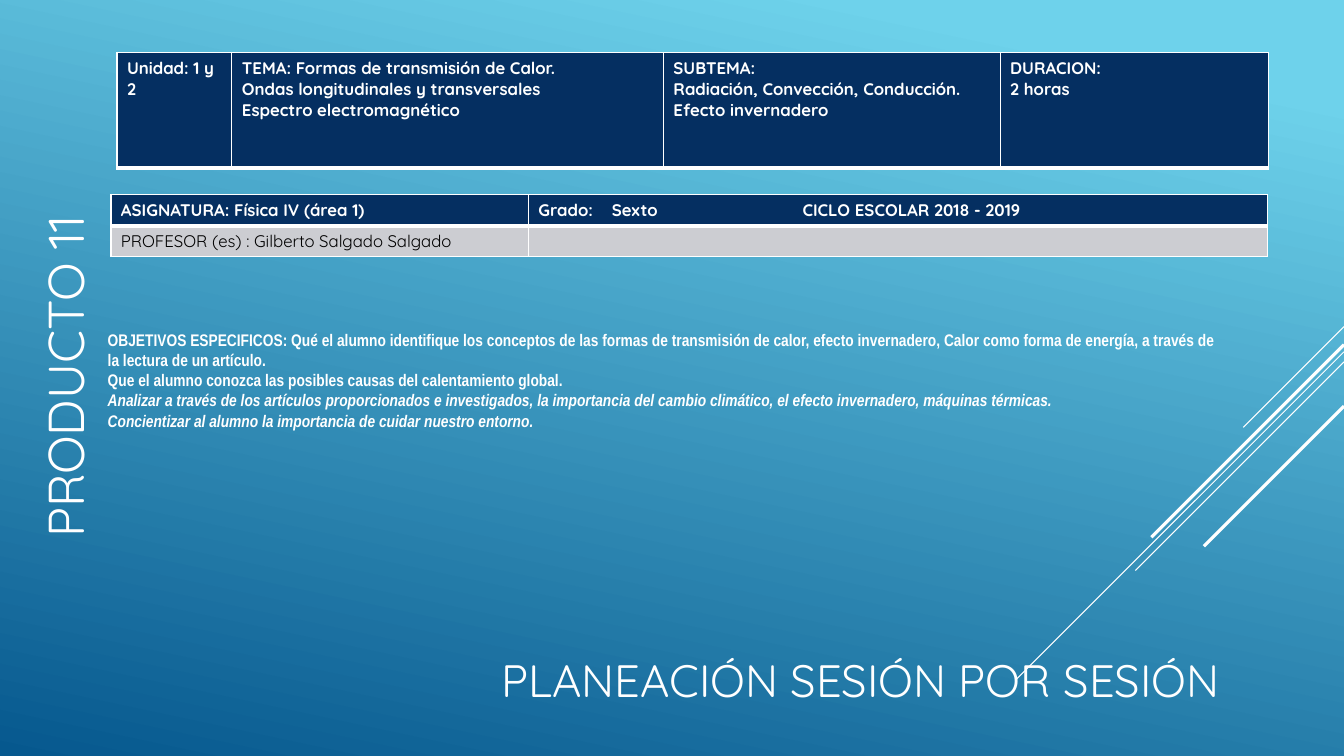
from dataclasses import dataclass

from lxml import etree
from pptx import Presentation
from pptx.dml.color import RGBColor
from pptx.enum.shapes import MSO_CONNECTOR
from pptx.enum.text import MSO_ANCHOR, MSO_AUTO_SIZE, PP_ALIGN
from pptx.oxml.ns import qn
from pptx.util import Inches, Pt

STRAIGHT = MSO_CONNECTOR.STRAIGHT
TOP, MIDDLE = MSO_ANCHOR.TOP, MSO_ANCHOR.MIDDLE
NO_AUTOFIT = MSO_AUTO_SIZE.NONE
LEFT = PP_ALIGN.LEFT
COLORS = {"sky": "6ED2EB", "sea": "06588E", "navy": "052F61",
          "gray": "CCCDD2", "white": "FFFFFF", "black": "000000"}
SLIDE_WIDTH, SLIDE_HEIGHT = 13.33, 7.5


@dataclass
class Ray:
    """A diagonal that descends at 45 degrees from the right edge."""
    top: float
    reach: float
    weight: float


@dataclass
class Entry:
    """The content and look of one table cell."""
    lines: tuple[str, ...]
    fill: str = "navy"
    color: str = "white"
    bold: bool = True
    bottom: float = 3
    tabs: tuple[float, ...] = ()


@dataclass
class Grid:
    """The place, columns and entries of one table."""
    left: float
    top: float
    columns: tuple[float, ...]
    row_height: float
    rows: list[list[Entry]]


RAYS = [Ray(3.24, 1, 0.75), Ray(3.49, 3.26, 0.75), Ray(3.59, 2.07, 0.75),
        Ray(3.42, 1.91, 2.25), Ray(4.03, 1.39, 2.25)]
TOPIC = Grid(1.16, 0.52, (1.14, 4.28, 3.34, 2.66), 1.15, [[
    Entry(("Unidad: 1 y 2",)),
    Entry(("TEMA: Formas de transmisión de Calor.",
           "Ondas longitudinales y transversales",
           "Espectro electromagnético")),
    Entry(("SUBTEMA:", "Radiación, Convección, Conducción.", "Efecto invernadero")),
    Entry(("DURACION:", "2 horas")),
]])
COURSE = Grid(1.1, 1.93, (4.14, 7.33), 0.3, [
    [Entry(("ASIGNATURA: Física IV (área 1)",)),
     Entry(("Grado:\tSexto\tCICLO ESCOLAR 2018 - 2019",), tabs=(0.73, 2.62))],
    [Entry(("PROFESOR (es) : Gilberto Salgado Salgado",), "gray", "black", False, 1),
     Entry((), "gray", bottom=1)],
])
OBJECTIVES = (
    "OBJETIVOS ESPECIFICOS: Qué el alumno identifique los conceptos de las formas de "
    "transmisión de calor, efecto invernadero, Calor como forma de energía, a través de "
    "la lectura de un artículo.",
    "Que el alumno conozca las posibles causas del calentamiento global.",
)
CLIMATE_GOALS = (
    "Analizar a través de los artículos proporcionados e investigados, la importancia del "
    "cambio climático, el efecto invernadero, máquinas térmicas.",
    "Concientizar al alumno la importancia de cuidar nuestro entorno.",
)


def rgb(name: str) -> RGBColor:
    """Return a named colour."""
    return RGBColor.from_string(COLORS[name])


def write(frame, lines, *, size=12.0, font="Quicksand", color="white",
          bold=False, italic=False, append=False) -> None:
    """Write one formatted paragraph per line."""
    for index, line in enumerate(lines):
        new = append or index > 0
        paragraph = frame.add_paragraph() if new else frame.paragraphs[0]
        paragraph.alignment = LEFT
        run = paragraph.add_run()
        run.text = line
        run.font.size, run.font.name = Pt(size), font
        run.font.bold, run.font.italic = bold, italic
        run.font.color.rgb = rgb(color)


def draw_ray(slide, ray: Ray) -> None:
    """Draw one white diagonal."""
    line = slide.shapes.add_connector(
        STRAIGHT, Inches(SLIDE_WIDTH), Inches(ray.top),
        Inches(SLIDE_WIDTH - ray.reach), Inches(ray.top + ray.reach))
    line.line.color.rgb = rgb("white")
    line.line.width = Pt(ray.weight)
    etree.SubElement(line._element.spPr, qn("a:effectLst"))


def add_borders(cell, bottom: float) -> None:
    """Give a cell white borders."""
    properties = cell._tc.get_or_add_tcPr()
    for side, weight in {"L": 1, "R": 1, "T": 1, "B": bottom}.items():
        border = etree.SubElement(properties, qn(f"a:ln{side}"), w=str(Pt(weight)))
        fill = etree.SubElement(border, qn("a:solidFill"))
        etree.SubElement(fill, qn("a:srgbClr"), val=COLORS["white"])


def fill_cell(cell, entry: Entry) -> None:
    """Format a cell and write its entry."""
    add_borders(cell, entry.bottom)
    cell.fill.solid()
    cell.fill.fore_color.rgb = rgb(entry.fill)
    write(cell.text_frame, entry.lines, color=entry.color, bold=entry.bold)
    first = cell.text_frame.paragraphs[0]._p
    if not entry.lines:
        etree.SubElement(first, qn("a:endParaRPr"), sz="1200")
    if entry.tabs:
        stops = etree.SubElement(first.get_or_add_pPr(), qn("a:tabLst"))
        for stop in entry.tabs:
            etree.SubElement(stops, qn("a:tab"), pos=str(Inches(stop)), algn="l")


def draw_grid(slide, grid: Grid) -> None:
    """Draw one table."""
    table = slide.shapes.add_table(
        len(grid.rows), len(grid.columns), Inches(grid.left), Inches(grid.top),
        Inches(sum(grid.columns)), Inches(grid.row_height * len(grid.rows))).table
    for column, width in zip(table.columns, grid.columns):
        column.width = Inches(width)
    for row, entries in zip(table.rows, grid.rows):
        row.height = Inches(grid.row_height)
        for cell, entry in zip(row.cells, entries):
            fill_cell(cell, entry)


def place(shape, left: float, top: float, width: float, height: float, anchor):
    """Place a text shape and return its wrapped frame."""
    shape.left, shape.top = Inches(left), Inches(top)
    shape.width, shape.height = Inches(width), Inches(height)
    frame = shape.text_frame
    frame.word_wrap, frame.auto_size = True, NO_AUTOFIT
    frame.vertical_anchor = anchor
    return frame


def main() -> None:
    """Build the session plan slide."""
    deck = Presentation()
    deck.slide_width, deck.slide_height = Inches(SLIDE_WIDTH), Inches(SLIDE_HEIGHT)
    slide = deck.slides.add_slide(deck.slide_layouts[5])

    backdrop = slide.background.fill
    backdrop.gradient()
    backdrop.gradient_angle = 258
    for stop, color, position in zip(backdrop.gradient_stops, ("sky", "sea"), (0.1, 1)):
        stop.color.rgb = rgb(color)
        stop.position = position
    for ray in RAYS:
        draw_ray(slide, ray)

    heading = place(slide.shapes.title, 4.87, 6.42, 8.38, 0.61, TOP)
    write(heading, ["PLANEACIÓN SESIÓN POR SESIÓN"], size=32.4)

    product = slide.shapes.add_textbox(0, 0, 0, 0)
    product.rotation = 270
    write(place(product, -1.61, 2.75, 4.49, 0.88, MIDDLE), ["PRODUCTO 11"], size=36)

    for grid in (TOPIC, COURSE):
        draw_grid(slide, grid)

    goals = place(slide.shapes.add_textbox(0, 0, 0, 0), 0.97, 2.62, 11.54, 2.12, TOP)
    goals.margin_top, goals.margin_right = Inches(0.65), Inches(0.4)
    write(goals, OBJECTIVES, font="Arial Narrow", bold=True)
    write(goals, CLIMATE_GOALS, font="Arial Narrow", bold=True, italic=True, append=True)

    deck.save("out.pptx")


if __name__ == "__main__":
    main()
